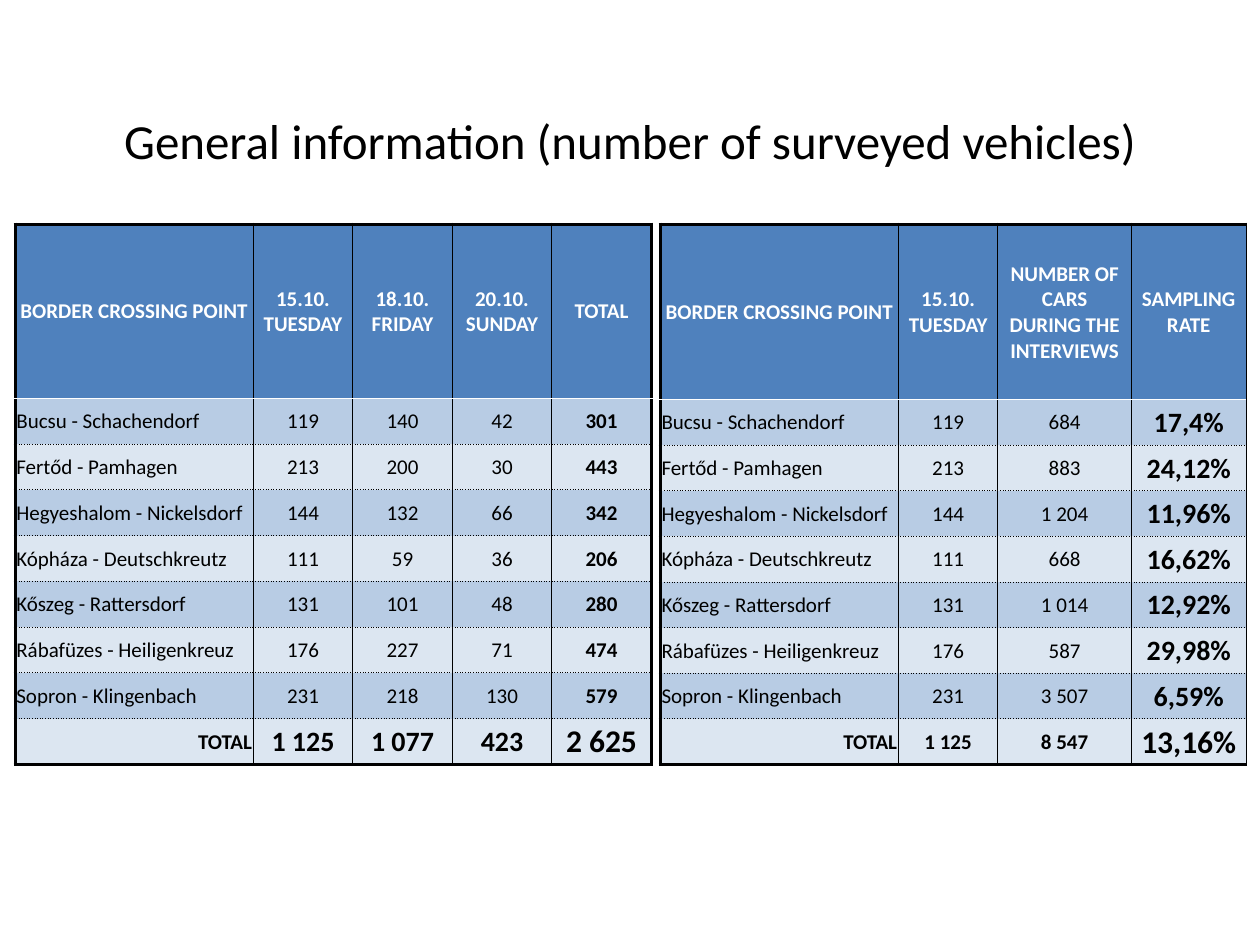
from copy import deepcopy

from lxml.etree import SubElement
from pptx import Presentation
from pptx.dml.color import RGBColor
from pptx.enum.text import MSO_ANCHOR, PP_ALIGN
from pptx.oxml.ns import qn
from pptx.util import Inches, Pt

FONT = "Calibri"
BLACK = RGBColor(0x00, 0x00, 0x00)
WHITE = RGBColor(0xFF, 0xFF, 0xFF)
HEADER_BLUE = RGBColor(0x4F, 0x81, 0xBD)
BANDS = [RGBColor(0xB8, 0xCC, 0xE4), RGBColor(0xDC, 0xE6, 0xF1)]

TITLE = "General information (number of surveyed vehicles)"
CROSSINGS = ["Bucsu - Schachendorf", "Fertőd - Pamhagen", "Hegyeshalom - Nickelsdorf",
             "Kópháza - Deutschkreutz", "Kőszeg - Rattersdorf",
             "Rábafüzes - Heiligenkreuz", "Sopron - Klingenbach", "TOTAL"]
POINT = "BORDER CROSSING POINT"
TUESDAY = "15.10. TUESDAY"
TUESDAY_COUNTS = ["119", "213", "144", "111", "131", "176", "231", "1 125"]

# value_size and total_size: text sizes of the last column, above and in the total row
SAMPLING = dict(
    left=5.24, header_height=1.39, widths=[1.89, 0.79, 1.06, 0.91],
    value_size=16, total_size=12, grand_size=18, right_border=0.5,
    columns={
        TUESDAY: TUESDAY_COUNTS,
        "NUMBER OF CARS\vDURING THE INTERVIEWS":
            ["684", "883", "1 204", "668", "1 014", "587", "3 507", "8 547"],
        "SAMPLING RATE":
            ["17,4%", "24,12%", "11,96%", "16,62%", "12,92%", "29,98%", "6,59%", "13,16%"],
    })
SURVEYED = dict(
    left=0.12, header_height=1.38, widths=[1.89, 0.79, 0.79, 0.79, 0.79],
    value_size=12, total_size=16, grand_size=18, right_border=2,
    columns={
        TUESDAY: TUESDAY_COUNTS,
        "18.10. FRIDAY": ["140", "200", "132", "59", "101", "227", "218", "1 077"],
        "20.10. SUNDAY": ["42", "30", "66", "36", "48", "71", "130", "423"],
        "TOTAL": ["301", "443", "342", "206", "280", "474", "579", "2 625"],
    })
TABLE_TOP, TABLE_HEIGHT = 1.78, 4.29


def write(tf, text, size=12, color=BLACK, bold=False, align=PP_ALIGN.CENTER):
    p = tf.paragraphs[0]
    p.text = text
    p.alignment = align
    for r in p.runs:
        r.font.name, r.font.size, r.font.bold = FONT, Pt(size), bold
        r.font.color.rgb = color
    for br in p._p.findall(qn("a:br")):
        br.insert(0, deepcopy(p.runs[0]._r.rPr))


def set_borders(cell, **sides):
    """Draw each side (L, R, T, B) from (width, colour, dash), ahead of the cell fill."""
    tc_pr = cell._tc.get_or_add_tcPr()
    for side in "LRTB":
        width, color, dash = sides[side]
        ln = SubElement(tc_pr, qn(f"a:ln{side}"), w=str(Pt(width)))
        SubElement(SubElement(ln, qn("a:solidFill")), qn("a:srgbClr"), val=str(color))
        SubElement(ln, qn("a:prstDash"), val=dash)


def add_survey_table(slide, t):
    grid = [[POINT, *t["columns"]], *zip(CROSSINGS, *t["columns"].values())]
    last_row, last_col = len(grid) - 1, len(t["widths"]) - 1
    table = slide.shapes.add_table(
        len(grid), len(t["widths"]), Inches(t["left"]), Inches(TABLE_TOP),
        Inches(sum(t["widths"])), Inches(TABLE_HEIGHT)).table
    table.first_row = table.horz_banding = False
    for column, width in zip(table.columns, t["widths"]):
        column.width = Inches(width)
    for i, row in enumerate(table.rows):
        row.height = Inches(t["header_height"] if i == 0
                            else (TABLE_HEIGHT - t["header_height"]) / last_row)

    thin, thick = (0.5, BLACK, "solid"), (2, BLACK, "solid")
    dotted, white_rule = (0.5, BLACK, "sysDot"), (0.5, WHITE, "solid")
    rules = [thick, white_rule, *[dotted] * (last_row - 1), thick]
    uprights = [thick, *[thin] * last_col, (t["right_border"], BLACK, "solid")]

    for i, values in enumerate(grid):
        for j, text in enumerate(values):
            cell = table.cell(i, j)
            header, total = i == 0, i == last_row
            size, align = 12, PP_ALIGN.CENTER
            if j == 0 and not header:
                align = PP_ALIGN.RIGHT if total else PP_ALIGN.LEFT
            elif total:
                size = t["grand_size"] if j == last_col else t["total_size"]
            elif j == last_col and not header:
                size = t["value_size"]
            write(cell.text_frame, text, size=size, align=align,
                  color=WHITE if header else BLACK,
                  bold=header or total or j == last_col)
            cell.vertical_anchor = MSO_ANCHOR.MIDDLE
            cell.margin_left = cell.margin_right = cell.margin_top = Inches(0.01)
            cell.margin_bottom = 0
            set_borders(cell, L=uprights[j], R=uprights[j + 1], T=rules[i], B=rules[i + 1])
            cell.fill.solid()
            cell.fill.fore_color.rgb = HEADER_BLUE if header else BANDS[(i - 1) % 2]


def main():
    prs = Presentation()
    prs.slide_width, prs.slide_height = Inches(10), Inches(7.5)
    s = prs.slides.add_slide(prs.slide_layouts[5])
    title = s.shapes.title
    title.left, title.top = Inches(0), Inches(0.84)
    title.width, title.height = Inches(10), Inches(0.54)
    title.text_frame.vertical_anchor = MSO_ANCHOR.MIDDLE
    write(title.text_frame, TITLE, size=28)
    for t in (SAMPLING, SURVEYED):
        add_survey_table(s, t)
    prs.save("out.pptx")


if __name__ == "__main__":
    main()
